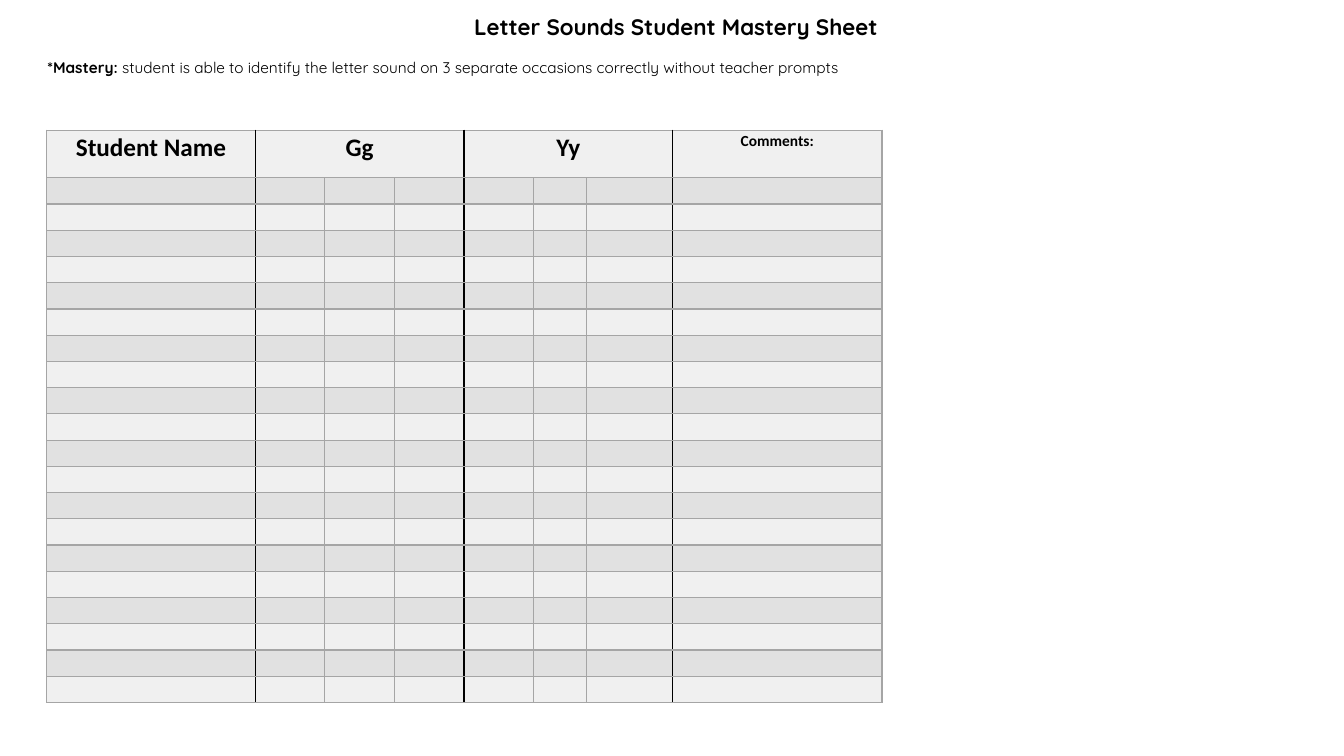
from dataclasses import dataclass

from lxml import etree
from pptx import Presentation
from pptx.dml.color import RGBColor
from pptx.enum.text import MSO_ANCHOR, PP_ALIGN
from pptx.oxml.ns import qn
from pptx.util import Pt

CENTER, LEFT = PP_ALIGN.CENTER, PP_ALIGN.LEFT
TOP = MSO_ANCHOR.TOP

BLACK = RGBColor(0x00, 0x00, 0x00)
GRID = RGBColor(0xA5, 0xA5, 0xA5)
LIGHT = RGBColor(0xF0, 0xF0, 0xF0)
DARK = RGBColor(0xE1, 0xE1, 0xE1)

HEADING_FONT = "Quicksand"
TABLE_FONT = "Calibri"

STUDENT_ROWS = 20
HEADER_HEIGHT = 34
ROW_HEIGHT = 18.75
COL_WIDTHS = [149, 49.7, 49.7, 49.7, 49.7, 37.6, 61.7, 149.6]


@dataclass
class Header:
    text: str
    col: int
    span: int = 1
    size: float = 18


HEADERS = [
    Header("Student Name", 0),
    Header("Gg", 1, span=3),
    Header("Yy", 4, span=3),
    Header("Comments:", 7, size=11),
]
GROUP_STARTS = {h.col for h in HEADERS[1:]}


def add_run(p, text: str, size: float, font: str, bold: bool = True) -> None:
    r = p.add_run()
    r.text = text
    r.font.size = Pt(size)
    r.font.name = font
    r.font.bold = bold
    r.font.color.rgb = BLACK


def set_border(cell, side: str, color: RGBColor) -> None:
    ln = etree.SubElement(cell._tc.get_or_add_tcPr(), qn(f"a:ln{side}"), w=str(Pt(1)))
    fill = etree.SubElement(ln, qn("a:solidFill"))
    etree.SubElement(fill, qn("a:srgbClr"), val=str(color))


def style_cell(cell, row: int, col: int) -> None:
    cell.margin_left = cell.margin_right = Pt(5)
    cell.margin_top = cell.margin_bottom = Pt(0)
    inside_header = {c for h in HEADERS for c in range(h.col + 1, h.col + h.span)}
    for side, edge in (("L", col), ("R", col + 1)):
        if row > 0 or edge not in inside_header:
            set_border(cell, side, BLACK if edge in GROUP_STARTS else GRID)
    for side in ("T", "B"):
        set_border(cell, side, GRID)
    cell.fill.solid()
    cell.fill.fore_color.rgb = DARK if row % 2 else LIGHT
    # Small end mark keeps empty rows at their set height
    etree.SubElement(cell.text_frame.paragraphs[0]._p, qn("a:endParaRPr"), sz="1100")


def add_mastery_table(s) -> None:
    height = HEADER_HEIGHT + STUDENT_ROWS * ROW_HEIGHT
    table = s.shapes.add_table(
        STUDENT_ROWS + 1, len(COL_WIDTHS),
        Pt(33.4), Pt(93), Pt(sum(COL_WIDTHS)), Pt(height)).table
    table.first_row = table.horz_banding = False

    # Grid
    for col, width in enumerate(COL_WIDTHS):
        table.columns[col].width = Pt(width)
    for row in range(STUDENT_ROWS + 1):
        table.rows[row].height = Pt(ROW_HEIGHT if row else HEADER_HEIGHT)
        for col in range(len(COL_WIDTHS)):
            style_cell(table.cell(row, col), row, col)

    # Header row
    for h in HEADERS:
        cell = table.cell(0, h.col)
        if h.span > 1:
            cell.merge(table.cell(0, h.col + h.span - 1))
        p = cell.text_frame.paragraphs[0]
        p.alignment = CENTER
        p.line_spacing = 1.07
        add_run(p, h.text, h.size, TABLE_FONT)


def add_heading(s) -> None:
    tf = s.shapes.add_textbox(Pt(26.8), Pt(5.8), Pt(912), Pt(84)).text_frame
    tf.word_wrap = True
    tf.vertical_anchor = TOP
    p = tf.paragraphs[0]
    p.alignment = CENTER
    add_run(p, "Letter Sounds Student Mastery Sheet", 16, HEADING_FONT)
    p = tf.add_paragraph()
    p.alignment = LEFT
    p.space_before = Pt(13)
    add_run(p, "*Mastery:", 11, HEADING_FONT)
    add_run(p, " student is able to identify the letter sound on 3 separate "
               "occasions correctly without teacher prompts", 11, HEADING_FONT, bold=False)


def main() -> None:
    prs = Presentation()
    prs.slide_width, prs.slide_height = Pt(960), Pt(540)
    s = prs.slides.add_slide(prs.slide_layouts[6])
    add_mastery_table(s)
    add_heading(s)
    prs.save("out.pptx")


if __name__ == "__main__":
    main()
